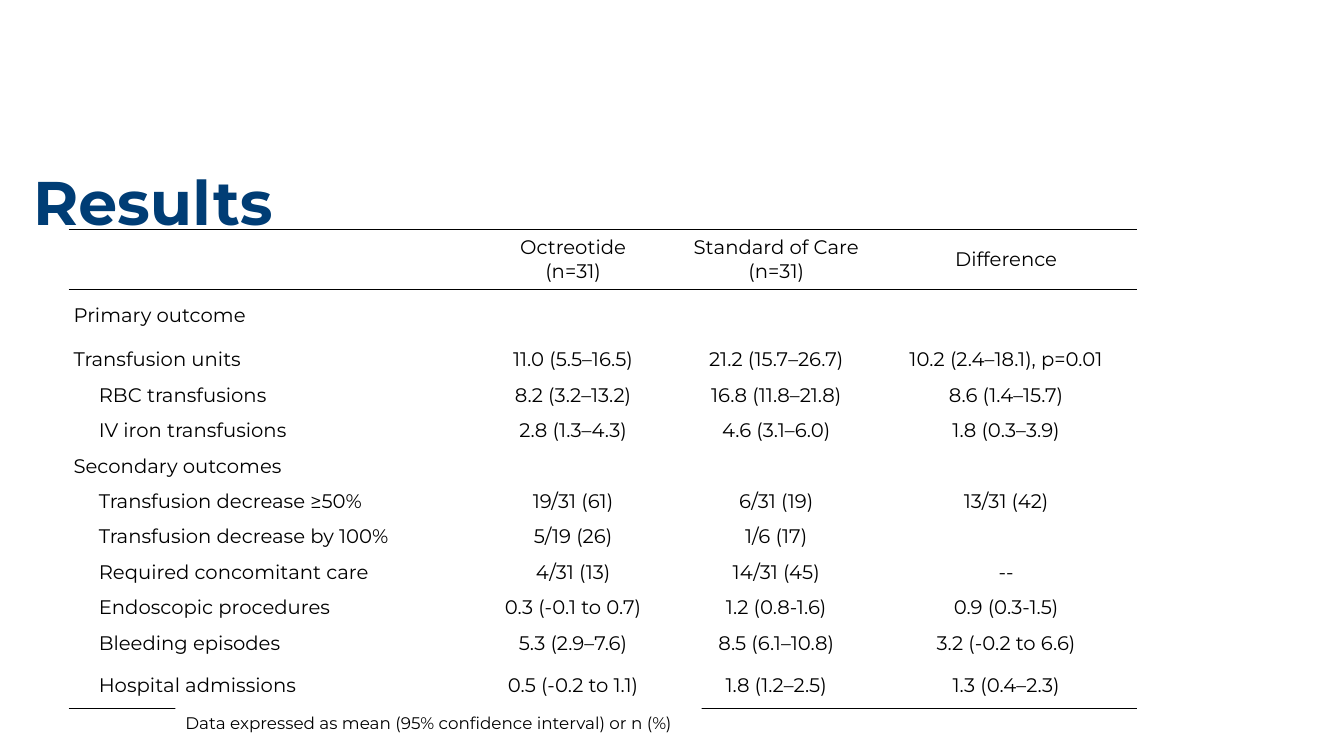
from lxml.etree import SubElement
from pptx import Presentation
from pptx.dml.color import RGBColor
from pptx.enum.shapes import MSO_SHAPE as Preset
from pptx.enum.text import MSO_ANCHOR as Anchor, MSO_AUTO_SIZE as AutoSize, PP_ALIGN as Align
from pptx.oxml.ns import qn
from pptx.util import Inches, Pt

FONT = "Montserrat"
BLACK, WHITE, NAVY = "000000", "FFFFFF", "003D75"
CELL_MARGIN, SUBROW_MARGIN = 0.05, 0.3
BODY_SIZE = 14
COLUMN_WIDTHS = [3.97, 2.07, 1.96, 2.6]
ROW_HEIGHTS = [0.59, 0.52, 0.36] + [0.35] * 7 + [0.37, 0.46]
HEADER = ["", "Octreotide\n(n=31)", "Standard of Care\n(n=31)", "Difference"]
SECTIONS = [
    (["Primary outcome", "", "", ""], []),
    (["Transfusion units", "11.0 (5.5–16.5)", "21.2 (15.7–26.7)", "10.2 (2.4–18.1), p=0.01"], [
        ["RBC transfusions", "8.2 (3.2–13.2)", "16.8 (11.8–21.8)", "8.6 (1.4–15.7)"],
        ["IV iron transfusions", "2.8 (1.3–4.3)", "4.6 (3.1–6.0)", "1.8 (0.3–3.9)"],
    ]),
    (["Secondary outcomes", "", "", ""], [
        ["Transfusion decrease ≥50%", "19/31 (61)", "6/31 (19)", "13/31 (42)"],
        ["Transfusion decrease by 100%", "5/19 (26)", "1/6 (17)", ""],
        ["Required concomitant care", "4/31 (13)", "14/31 (45)", "--"],
        ["Endoscopic procedures", "0.3 (-0.1 to 0.7)", "1.2 (0.8-1.6)", "0.9 (0.3-1.5)"],
        ["Bleeding episodes", "5.3 (2.9–7.6)", "8.5 (6.1–10.8)", "3.2 (-0.2 to 6.6)"],
        ["Hospital admissions", "0.5 (-0.2 to 1.1)", "1.8 (1.2–2.5)", "1.3 (0.4–2.3)"],
    ]),
]


def color(value):
    return RGBColor.from_string(value)


def style_text(para, size, value, align=Align.LEFT, bold=False):
    para.alignment = align
    for span in para.runs:
        span.font.name = FONT
        span.font.size = Pt(size)
        span.font.bold = bold
        span.font.color.rgb = color(value)


def add_title(slide, box, text):
    title = slide.shapes.add_textbox(*map(Inches, box))
    frame = title.text_frame
    frame.word_wrap = True
    frame.vertical_anchor = Anchor.MIDDLE
    frame.text = text
    para = frame.paragraphs[0]
    para.line_spacing = 0.9
    style_text(para, 44, NAVY, bold=True)


def set_borders(cell, ruled_sides):
    properties = cell._tc.get_or_add_tcPr()
    for side in "LRTB":
        line = SubElement(properties, qn(f"a:ln{side}"))
        if side in ruled_sides:
            line.set("w", str(Pt(1)))
            fill = SubElement(line, qn("a:solidFill"))
            SubElement(fill, qn("a:srgbClr")).set("val", BLACK)
        else:
            SubElement(line, qn("a:noFill"))


def fill_cell(cell, text, align, left_margin, ruled_sides):
    set_borders(cell, ruled_sides)
    cell.fill.solid()
    cell.fill.fore_color.rgb = color(WHITE)
    cell.vertical_anchor = Anchor.MIDDLE
    cell.margin_left = Inches(left_margin)
    cell.margin_right = cell.margin_top = cell.margin_bottom = Inches(CELL_MARGIN)
    cell.text_frame.text = text
    for para in cell.text_frame.paragraphs:
        style_text(para, BODY_SIZE, BLACK, align)
        if not para.runs:
            SubElement(para._p, qn("a:endParaRPr")).set("sz", str(BODY_SIZE * 100))


def add_results_table(slide, box):
    rows = [(HEADER, CELL_MARGIN)]
    for heading, subrows in SECTIONS:
        rows.append((heading, CELL_MARGIN))
        rows.extend((subrow, SUBROW_MARGIN) for subrow in subrows)
    table = slide.shapes.add_table(len(rows), len(HEADER), *map(Inches, box)).table
    table.first_row = table.horz_banding = False
    for column, width in zip(table.columns, COLUMN_WIDTHS):
        column.width = Inches(width)
    for row, height in zip(table.rows, ROW_HEIGHTS):
        row.height = Inches(height)
    ruled_sides = {0: "TB", 1: "T", len(rows) - 1: "B"}
    for row_index, (texts, label_margin) in enumerate(rows):
        for column_index, text in enumerate(texts):
            is_label = column_index == 0
            fill_cell(
                table.cell(row_index, column_index),
                text,
                Align.LEFT if is_label else Align.CENTER,
                label_margin if is_label else CELL_MARGIN,
                ruled_sides.get(row_index, ""),
            )


def add_footnote(slide, box, text):
    note = slide.shapes.add_shape(Preset.RECTANGLE, *map(Inches, box))
    note.shadow.inherit = False
    note.fill.solid()
    note.fill.fore_color.rgb = color(WHITE)
    note.line.fill.background()
    frame = note.text_frame
    frame.word_wrap = True
    frame.auto_size = AutoSize.SHAPE_TO_FIT_TEXT
    frame.vertical_anchor = Anchor.TOP
    frame.text = text
    style_text(frame.paragraphs[0], 12, BLACK)


def main():
    deck = Presentation()
    deck.slide_width, deck.slide_height = Inches(13.33), Inches(7.5)
    slide = deck.slides.add_slide(deck.slide_layouts[6])
    add_title(slide, (0.23, 1.59, 11.5, 0.9), "Results")
    add_results_table(slide, (0.68, 2.28, sum(COLUMN_WIDTHS), sum(ROW_HEIGHTS)))
    add_footnote(slide, (1.74, 7.02, 5.22, 0.3),
                 "Data expressed as mean (95% confidence interval) or n (%)")
    deck.save("out.pptx")


if __name__ == "__main__":
    main()
